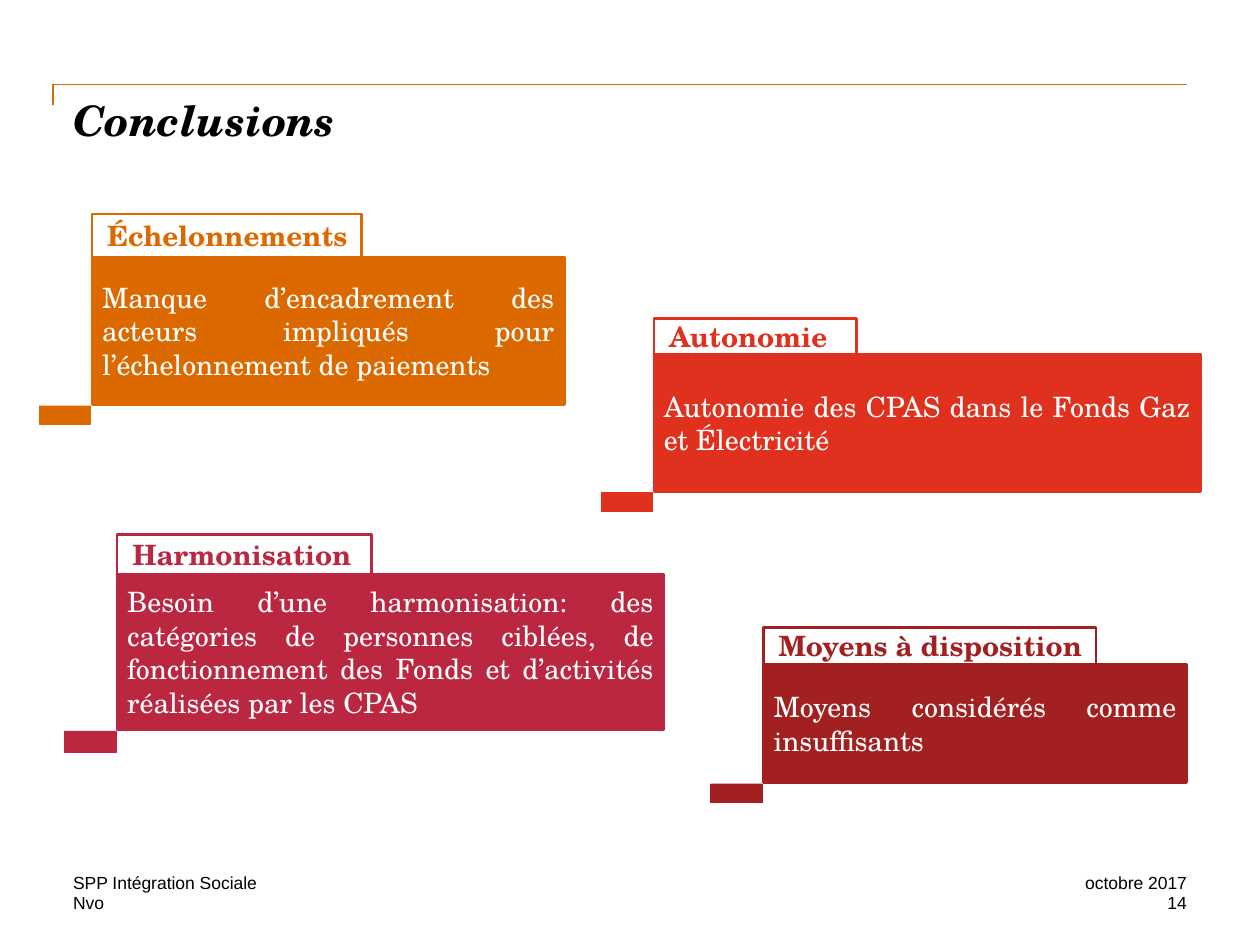
from dataclasses import dataclass

from pptx import Presentation
from pptx.dml.color import RGBColor
from pptx.enum.shapes import MSO_SHAPE
from pptx.enum.text import MSO_ANCHOR, MSO_AUTO_SIZE, PP_ALIGN
from pptx.util import Inches, Pt


@dataclass(frozen=True)
class Theme:
    serif: str = "TeX Gyre Schola"
    sans: str = "Arial"
    title_size: float = 24
    card_size: float = 16
    footer_size: float = 10
    black: str = "000000"
    white: str = "FFFFFF"
    orange: str = "DC6900"
    red: str = "E0301E"
    rose: str = "BB2740"
    maroon: str = "A32020"


def apply(target, values):
    for name, value in values.items():
        setattr(target, name, value)


class SlideBuilder:
    def __init__(self, page, theme):
        self.page = page
        self.theme = theme

    def set_text(self, box, text, font, size, color, bold=False, italic=False,
                 align=PP_ALIGN.LEFT, anchor=MSO_ANCHOR.TOP, inset=0, left_inset=None, after=0):
        frame = box.text_frame
        apply(frame, {
            "word_wrap": True,
            "auto_size": MSO_AUTO_SIZE.NONE,
            "vertical_anchor": anchor,
            "margin_left": Inches(inset if left_inset is None else left_inset),
            "margin_top": Inches(inset),
            "margin_right": Inches(inset),
            "margin_bottom": Inches(inset),
        })
        para = frame.paragraphs[0]
        apply(para, {"alignment": align, "space_before": Pt(0), "space_after": Pt(after)})
        span = para.add_run()
        span.text = text
        apply(span.font, {"name": font, "size": Pt(size), "bold": bold, "italic": italic})
        span.font.color.rgb = RGBColor.from_string(color)

    def title(self, text, left, top, width, height):
        box = self.page.shapes.title
        apply(box, {"left": Inches(left), "top": Inches(top),
                    "width": Inches(width), "height": Inches(height)})
        self.set_text(box, text, self.theme.serif, self.theme.title_size, self.theme.black,
                      bold=True, italic=True)

    def corner_rule(self, left, top, right, bottom):
        outline = self.page.shapes.build_freeform(Inches(left), Inches(bottom))
        outline.add_line_segments(
            [(Inches(left), Inches(top)), (Inches(right), Inches(top))], close=False)
        rule = outline.convert_to_shape()
        rule.shadow.inherit = False
        rule.fill.background()
        rule.line.color.rgb = RGBColor.from_string(self.theme.orange)
        rule.line.width = Pt(1)

    def rectangle(self, group, left, top, width, height, color, line_width, filled=True):
        box = group.shapes.add_shape(MSO_SHAPE.RECTANGLE, Inches(left), Inches(top),
                                     Inches(width), Inches(height))
        box.shadow.inherit = False
        if filled:
            box.fill.solid()
            box.fill.fore_color.rgb = RGBColor.from_string(color)
        else:
            box.fill.background()
        box.line.color.rgb = RGBColor.from_string(color)
        box.line.width = Pt(line_width)
        return box

    def card(self, heading, text, color, left, top, width, height,
             heading_width, heading_height, foot_height=0.15):
        theme = self.theme
        group = self.page.shapes.add_group_shape()
        body = self.rectangle(group, left, top, width, height, color, 1.5)
        self.set_text(body, text, theme.serif, theme.card_size, theme.white,
                      align=PP_ALIGN.JUSTIFY, anchor=MSO_ANCHOR.MIDDLE, inset=0.08, after=9)
        label = self.rectangle(group, left, top - heading_height, heading_width,
                               heading_height, color, 1.5, filled=False)
        self.set_text(label, heading, theme.serif, theme.card_size, color, bold=True,
                      anchor=MSO_ANCHOR.MIDDLE, left_inset=0.12, after=9)
        self.rectangle(group, left - 0.42, top + height + 0.01, 0.41, foot_height, color, 0.25)

    def footer(self, text, left, top, width, align=PP_ALIGN.LEFT):
        box = self.page.shapes.add_textbox(Inches(left), Inches(top), Inches(width), Inches(0.17))
        self.set_text(box, text, self.theme.sans, self.theme.footer_size, self.theme.black,
                      align=align)


def main():
    deck = Presentation()
    deck.slide_width, deck.slide_height = Inches(10), Inches(7.5)
    theme = Theme()
    builder = SlideBuilder(deck.slides.add_slide(deck.slide_layouts[5]), theme)

    builder.corner_rule(0.42, 0.67, 9.42, 0.83)
    builder.title("Conclusions", 0.58, 0.75, 8.83, 0.83)

    cards = [
        ("Harmonisation",
         "Besoin d’une harmonisation: des catégories de personnes ciblées, de "
         "fonctionnement des Fonds et d’activités réalisées par les CPAS",
         theme.rose, 0.93, 4.56, 4.34, 1.23, 2.02, 0.32, 0.17),
        ("Moyens à disposition", "Moyens considérés comme insuffisants",
         theme.maroon, 6.06, 5.27, 3.36, 0.94, 2.64, 0.29),
        ("Autonomie", "Autonomie des CPAS dans le Fonds Gaz et Électricité",
         theme.red, 5.19, 2.81, 4.34, 1.09, 1.61, 0.28),
        ("Échelonnements",
         "Manque d’encadrement des acteurs impliqués pour l’échelonnement de paiements",
         theme.orange, 0.73, 2.04, 3.75, 1.17, 2.14, 0.34),
    ]
    for card in cards:
        builder.card(*card)

    upper, lower = 6.92, 7.08
    builder.footer("SPP Intégration Sociale", 0.58, upper, 5.75)
    builder.footer("Nvo", 0.58, lower, 2.83)
    builder.footer("octobre 2017", 7.75, upper, 1.67, PP_ALIGN.RIGHT)
    builder.footer("14", 7.75, lower, 1.67, PP_ALIGN.RIGHT)

    deck.save("out.pptx")


if __name__ == "__main__":
    main()
